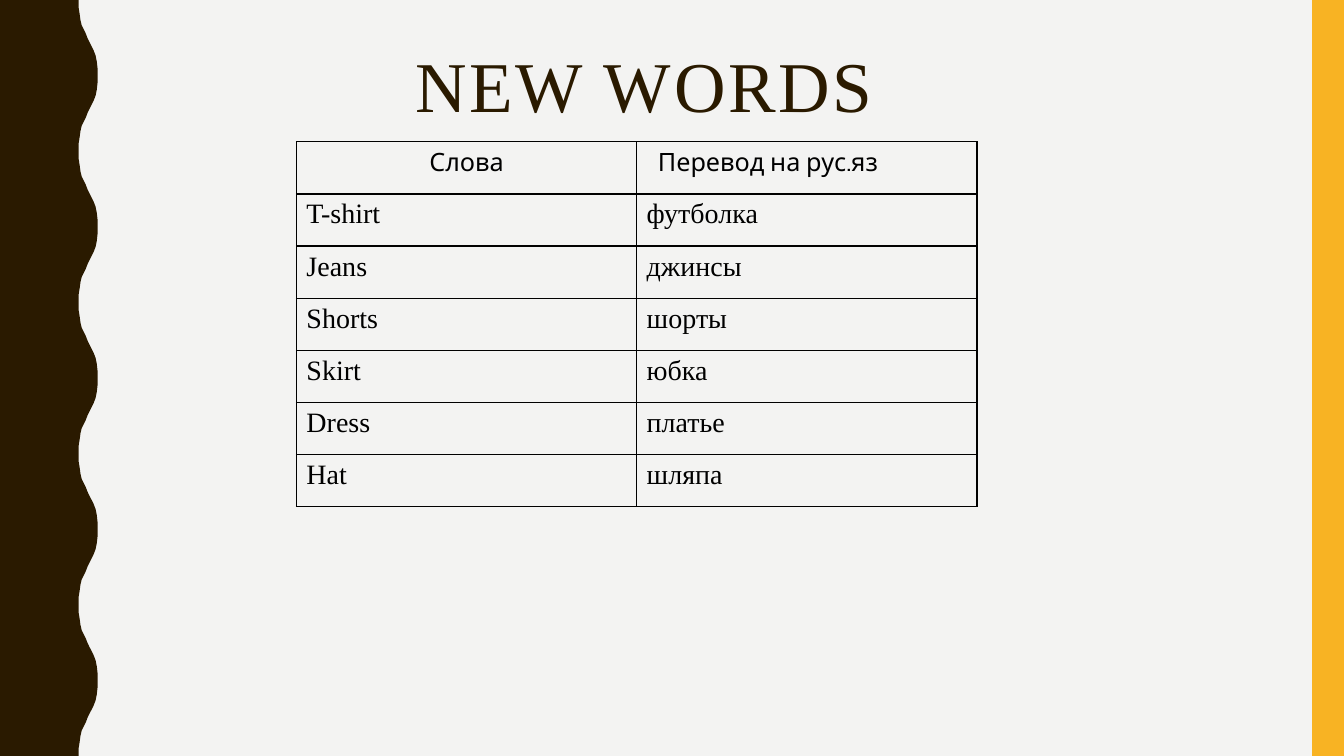
from lxml.etree import SubElement
from pptx import Presentation
from pptx.dml.color import RGBColor
from pptx.enum.shapes import MSO_SHAPE
from pptx.enum.text import MSO_ANCHOR, MSO_AUTO_SIZE, PP_ALIGN
from pptx.oxml.ns import qn
from pptx.util import Cm, Pt

SERIF = "Times New Roman"
SANS = "Cabin"
BROWN = "2A1A00"
BLACK = "000000"
WORDS = [
    ("Слова", "Перевод на рус.яз"),
    ("T-shirt", "футболка"),
    ("Jeans", "джинсы"),
    ("Shorts", "шорты"),
    ("Skirt", "юбка"),
    ("Dress", "платье"),
    ("Hat", "шляпа"),
]
WAVE_PERIOD = 3.81
HALF_WAVE = [
    (1.98, 0), (1.98, 0.18), (2.01, 0.36), (2.03, 0.51), (2.06, 0.64),
    (2.11, 0.74), (2.16, 0.84), (2.21, 0.97), (2.26, 1.07), (2.31, 1.17),
    (2.36, 1.27), (2.41, 1.4), (2.44, 1.55), (2.46, 1.73), (2.46, 1.9),
]


def color(value):
    return RGBColor.from_string(value)


def put_text(tf, text, size, font, fill=BLACK, align=PP_ALIGN.LEFT,
             indent=0, tracking=0, line_spacing=None):
    p = tf.paragraphs[0]
    p.alignment = align
    if line_spacing:
        p.line_spacing = line_spacing
    if indent:
        pPr = p._p.get_or_add_pPr()
        pPr.set("marL", str(Cm(indent)))
        pPr.set("indent", "0")
    r = p.add_run()
    r.text = text
    r.font.size = Pt(size)
    r.font.name = font
    r.font.bold = False
    r.font.color.rgb = color(fill)
    if tracking:
        r._r.get_or_add_rPr().set("spc", str(tracking * 100))


def paint(shape, fill):
    shape.shadow.inherit = False
    shape.fill.solid()
    shape.fill.fore_color.rgb = color(fill)
    shape.line.fill.background()


def add_wave(s, left, top, height):
    period = HALF_WAVE + [(x, WAVE_PERIOD - y) for x, y in HALF_WAVE[-2::-1]]
    edge = [(x, y + n * WAVE_PERIOD)
            for n in range(round(height / WAVE_PERIOD)) for x, y in period]
    points = [(Cm(left + x), Cm(top + y)) for x, y in edge + [(0, height)]]
    builder = s.shapes.build_freeform(Cm(left), Cm(top))
    builder.add_line_segments(points, close=True)
    paint(builder.convert_to_shape(), BROWN)


def add_side_bar(s, left, top, width, height):
    bar = s.shapes.add_shape(MSO_SHAPE.RECTANGLE, Cm(left), Cm(top),
                             Cm(width), Cm(height))
    paint(bar, "F8B323")


def add_title(s, left, top, width, height):
    title = s.shapes.title
    title.left, title.top = Cm(left), Cm(top)
    title.width, title.height = Cm(width), Cm(height)
    tf = title.text_frame
    tf.word_wrap = True
    tf.auto_size = MSO_AUTO_SIZE.NONE
    tf.vertical_anchor = MSO_ANCHOR.TOP
    tf.margin_top = Cm(0.25)
    put_text(tf, "NEW WORDS", 51, SERIF, fill=BROWN, indent=6.73,
             tracking=2, line_spacing=0.9)


def set_borders(cell, widths):
    tcPr = cell._tc.get_or_add_tcPr()
    for side, width in widths.items():
        ln = SubElement(tcPr, qn(f"a:ln{side}"), w=str(Pt(width)))
        fill = SubElement(ln, qn("a:solidFill"))
        SubElement(fill, qn("a:srgbClr"), val=BLACK)


def add_word_table(s, left, top, width, height):
    frame = s.shapes.add_table(len(WORDS), 2, Cm(left), Cm(top),
                               Cm(width), Cm(height))
    table = frame.table
    table.first_row = table.horz_banding = False
    for row, words in enumerate(WORDS):
        table.rows[row].height = Cm(height / len(WORDS))
        for col, word in enumerate(words):
            cell = table.cell(row, col)
            set_borders(cell, {"L": 1, "R": 1, "T": 2 if row == 1 else 1,
                               "B": 2 if row == 0 else 1})
            cell.fill.background()
            if row:
                put_text(cell.text_frame, word, 20, SERIF)
            elif col:
                put_text(cell.text_frame, word, 18, SANS, indent=0.28)
            else:
                put_text(cell.text_frame, word, 18, SANS,
                         align=PP_ALIGN.CENTER)


def main():
    prs = Presentation()
    prs.slide_width, prs.slide_height = Cm(33.87), Cm(19.05)
    s = prs.slides.add_slide(prs.slide_layouts[5])
    s.background.fill.solid()
    s.background.fill.fore_color.rgb = color("F3F3F2")
    add_wave(s, 0, 0, 19.05)
    add_side_bar(s, 33.07, 0, 0.8, 19.05)
    add_title(s, 3.48, 1.04, 28.27, 3.18)
    add_word_table(s, 7.47, 3.57, 17.15, 9.2)
    prs.save("out.pptx")


if __name__ == "__main__":
    main()
